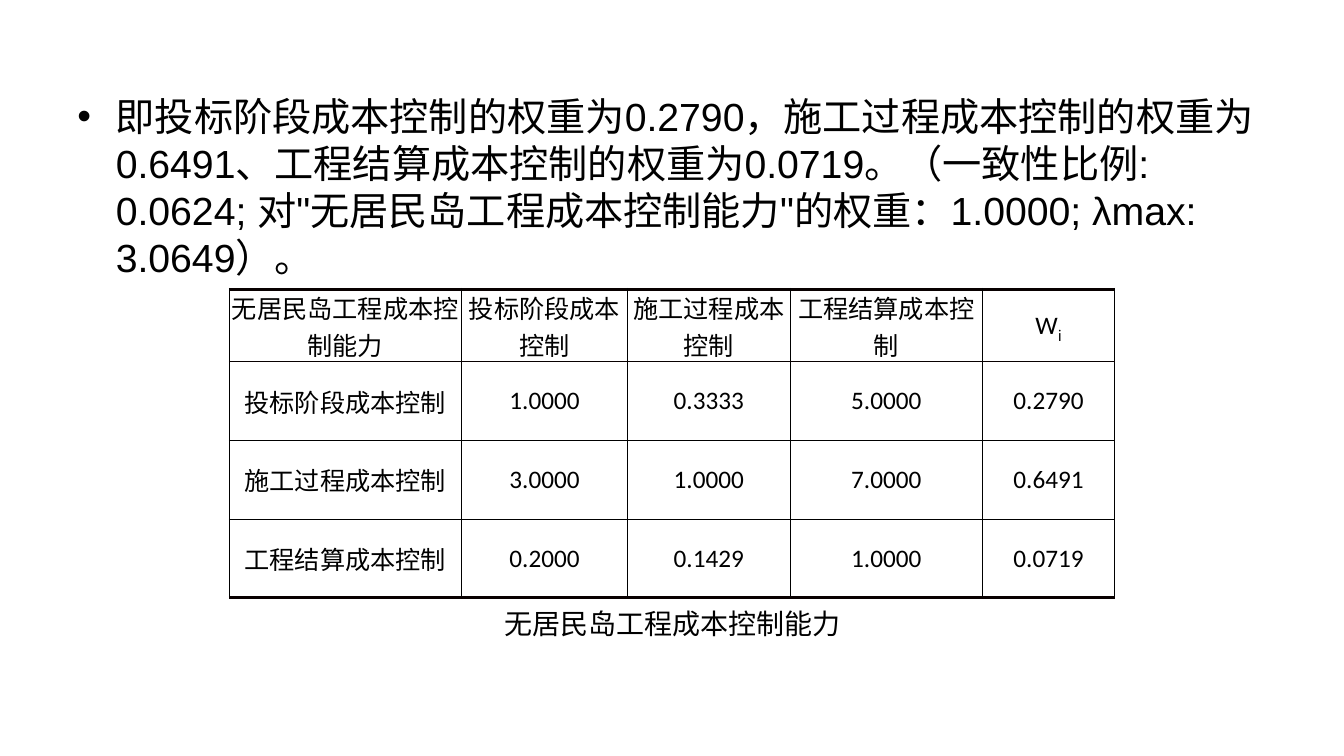
from lxml import etree
from pptx import Presentation
from pptx.dml.color import RGBColor
from pptx.enum.text import MSO_ANCHOR, PP_ALIGN
from pptx.oxml.ns import qn
from pptx.util import Inches, Pt

CENTER, MIDDLE = PP_ALIGN.CENTER, MSO_ANCHOR.MIDDLE

SUMMARY = (
    "即投标阶段成本控制的权重为0.2790，施工过程成本控制的权重为0.6491、"
    "工程结算成本控制的权重为0.0719。（一致性比例: 0.0624; "
    "对\"无居民岛工程成本控制能力\"的权重：1.0000; λmax: 3.0649）。"
)
GOAL = "无居民岛工程成本控制能力"
STAGES = ["投标阶段成本控制", "施工过程成本控制", "工程结算成本控制"]
WEIGHT_SYMBOL, WEIGHT_INDEX = "W", "i"
JUDGEMENTS = [
    ("1.0000", "0.3333", "5.0000", "0.2790"),
    ("3.0000", "1.0000", "7.0000", "0.6491"),
    ("0.2000", "0.1429", "1.0000", "0.0719"),
]
MATRIX = [(GOAL, *STAGES, WEIGHT_SYMBOL)] + [
    (stage, *values) for stage, values in zip(STAGES, JUDGEMENTS)
]

THEME = {
    "ink": "000000",
    "rule": "080000",
    "body": "Arial",
    "table": "Calibri",
    "east_asian": "Noto Sans CJK SC",
    "summary_size": 28,
    "caption_size": 20,
    "table_size": 18,
}
SLIDE_W, SLIDE_H = 13.33, 7.5
BODY_LEFT, BODY_TOP, BODY_W, BODY_H = 0.67, 0.87, 12, 5.83
HANGING = Inches(0.38)
COLUMNS = [2.3, 1.65, 1.61, 1.91, 1.31]
ROWS = [0.72] + [0.78] * len(STAGES)
TABLE_TOP = 2.87
THIN = (THEME["ink"], 0.75)
THICK = (THEME["rule"], 2.25)
ROW_RULES = [THICK, (THEME["rule"], 1), THIN, THIN, THICK]


def apply(target, values):
    for name, value in values.items():
        setattr(target, name, value)


def write(paragraph, words, typeface, size):
    run = paragraph.add_run()
    run.text = words
    apply(run.font, {"name": typeface, "size": Pt(size)})
    run.font.color.rgb = RGBColor.from_string(THEME["ink"])
    properties = run._r.get_or_add_rPr()
    etree.SubElement(properties, qn("a:ea")).set("typeface", THEME["east_asian"])
    return properties


def add_bullet(paragraph):
    properties = paragraph._p.get_or_add_pPr()
    properties.set("marL", str(HANGING))
    properties.set("indent", str(-HANGING))
    etree.SubElement(properties, qn("a:buFont")).set("typeface", THEME["body"])
    etree.SubElement(properties, qn("a:buChar")).set("char", "•")


def add_borders(cell, row):
    properties = cell._tc.get_or_add_tcPr()
    sides = {"L": THIN, "R": THIN, "T": ROW_RULES[row], "B": ROW_RULES[row + 1]}
    for side, (colour, width) in sides.items():
        line = etree.SubElement(properties, qn(f"a:ln{side}"))
        line.set("w", str(Pt(width)))
        fill = etree.SubElement(line, qn("a:solidFill"))
        etree.SubElement(fill, qn("a:srgbClr")).set("val", colour)


def add_body(slide):
    box = slide.shapes.add_textbox(
        *map(Inches, (BODY_LEFT, BODY_TOP, BODY_W, BODY_H)))
    frame = box.text_frame
    apply(frame, {"word_wrap": True, "margin_top": Inches(0.05)})
    summary = frame.paragraphs[0]
    add_bullet(summary)
    summary.line_spacing = Pt(33.6)
    write(summary, SUMMARY, THEME["body"], THEME["summary_size"])
    caption = frame.add_paragraph()
    apply(caption, {"alignment": CENTER, "space_before": Pt(233)})
    write(caption, GOAL, THEME["body"], THEME["caption_size"])


def add_matrix(slide):
    width = sum(COLUMNS)
    left = (SLIDE_W - width) / 2
    table = slide.shapes.add_table(
        len(ROWS), len(COLUMNS),
        *map(Inches, (left, TABLE_TOP, width, sum(ROWS)))).table
    apply(table, {"first_row": False, "horz_banding": False})
    for column, share in zip(table.columns, COLUMNS):
        column.width = Inches(share)
    for row, share in zip(table.rows, ROWS):
        row.height = Inches(share)
    for r, entries in enumerate(MATRIX):
        for c, words in enumerate(entries):
            cell = table.cell(r, c)
            apply(cell, {"vertical_anchor": MIDDLE, "margin_left": 0,
                         "margin_right": 0, "margin_top": 0, "margin_bottom": 0})
            add_borders(cell, r)
            cell.fill.background()
            paragraph = cell.text_frame.paragraphs[0]
            paragraph.alignment = CENTER
            write(paragraph, words, THEME["table"], THEME["table_size"])
    symbol = table.cell(0, len(COLUMNS) - 1).text_frame.paragraphs[0]
    index = write(symbol, WEIGHT_INDEX, THEME["east_asian"], THEME["table_size"])
    index.set("baseline", "-25000")


def main():
    deck = Presentation()
    apply(deck, {"slide_width": Inches(SLIDE_W), "slide_height": Inches(SLIDE_H)})
    slide = deck.slides.add_slide(deck.slide_layouts[6])
    add_body(slide)
    add_matrix(slide)
    deck.save("out.pptx")


if __name__ == "__main__":
    main()
